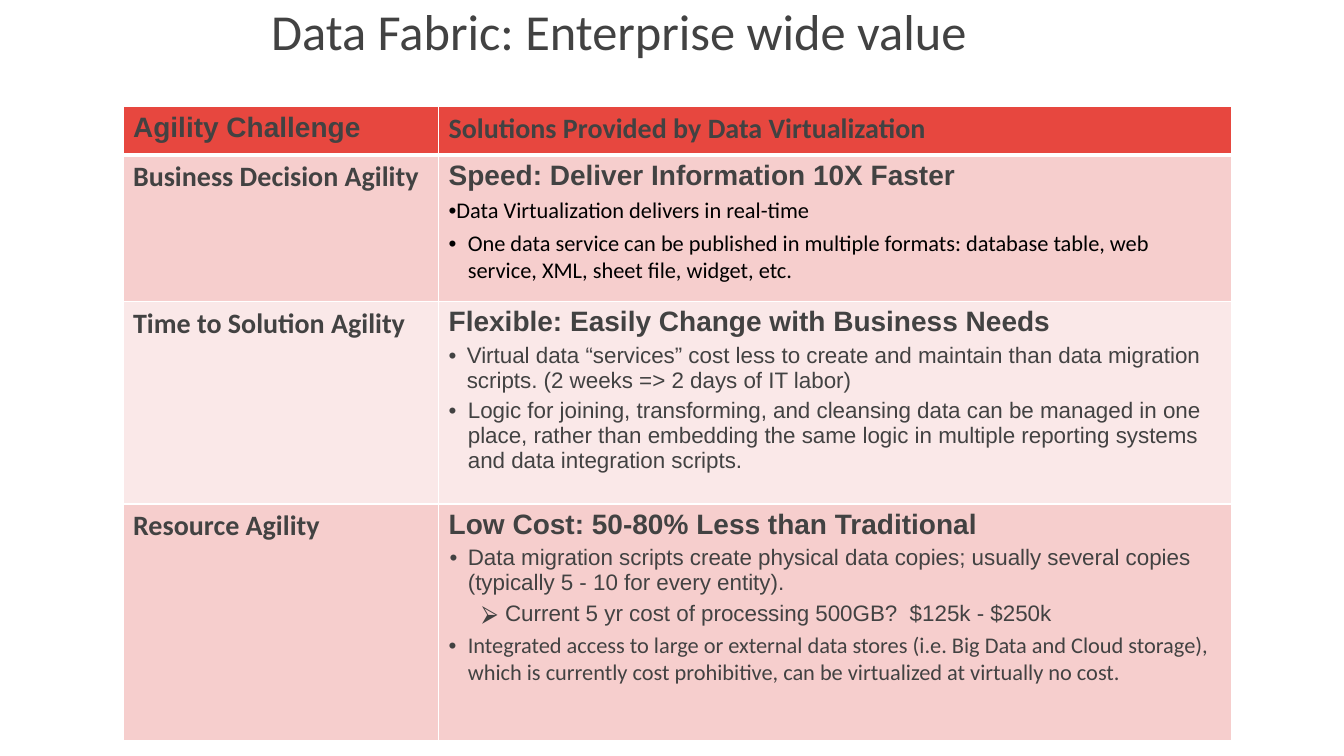
from lxml import etree
from pptx import Presentation
from pptx import util as u
from pptx.dml.color import RGBColor
from pptx.enum import text
from pptx.oxml.ns import qn

WIDTH, HEIGHT = 13.33, 7.5
GREY, BLACK, WHITE = "424242", "000000", "FFFFFF"
RED, ROSE, BLUSH = "E7473F", "F6CECD", "FAE8E8"

TITLE = "Data Fabric: Enterprise wide value"
COLUMNS = [3.13, 7.87]
ROWS = [0.48, 1.45, 2.01, 2.35]
FILLS = [RED, ROSE, BLUSH, ROSE]

HEADERS = [("Agility Challenge", "Arial"), ("Solutions Provided by Data Virtualization", "Calibri")]
CHALLENGES = [
    ("Business Decision Agility", "Speed: Deliver Information 10X Faster", [
        ("Data Virtualization delivers in real-time", "Calibri", BLACK, "•", 0, 0),
        ("One data service can be published in multiple formats: database table, web "
         "service, XML, sheet file, widget, etc.", "Calibri", BLACK, "•", 0.19, 0.19),
    ]),
    ("Time to Solution Agility", "Flexible: Easily Change with Business Needs", [
        ("Virtual data “services” cost less to create and maintain than data migration scripts. "
         "(2 weeks => 2 days of IT labor)", "Arial", GREY, "•", 0.18, 0.18),
        ("Logic for joining, transforming, and cleansing data can be managed in one place, rather "
         "than embedding the same logic in multiple reporting systems and data integration scripts.",
         "Arial", GREY, "•", 0.19, 0.19),
    ]),
    ("Resource Agility", "Low Cost: 50-80% Less than Traditional", [
        ("Data migration scripts create physical data copies; usually several copies "
         "(typically 5 - 10 for every entity).", "Arial", GREY, "•", 0.19, 0.18),
        ("Current 5 yr cost of processing 500GB?  $125k - $250k", "Arial", GREY, "⮚", 0.56, 0.23),
        ("Integrated access to large or external data stores (i.e. Big Data and Cloud storage), "
         "which is currently cost prohibitive, can be virtualized at virtually no cost.",
         "Calibri", GREY, "•", 0.19, 0.19),
    ]),
]


def color(value):
    return RGBColor.from_string(value)


def style(para, face, size, ink=GREY, bold=False):
    para.font.name = face
    para.font.size = u.Pt(size)
    para.font.bold = bold
    para.font.color.rgb = color(ink)


def add_bullet(para, mark, ink, margin, hang):
    props = para._p.get_or_add_pPr()
    props.set("marL", str(u.Inches(margin)))
    props.set("indent", str(-u.Inches(hang)))
    tint = etree.SubElement(props, qn("a:buClr"))
    etree.SubElement(tint, qn("a:srgbClr"), val=ink)
    etree.SubElement(props, qn("a:buFont"), typeface="Arial")
    etree.SubElement(props, qn("a:buChar"), char=mark)


def format_cell(cell, fill, bottom):
    props = cell._tc.get_or_add_tcPr()
    for side, points in (("L", 1), ("R", 1), ("T", 1), ("B", bottom)):
        line = etree.SubElement(props, qn("a:ln" + side), w=str(u.Pt(points)))
        solid = etree.SubElement(line, qn("a:solidFill"))
        etree.SubElement(solid, qn("a:srgbClr"), val=WHITE)
    cell.fill.solid()
    cell.fill.fore_color.rgb = color(fill)


def write_heading(cell, words, face):
    para = cell.text_frame.paragraphs[0]
    para.text = words
    style(para, face, 20, bold=True)


def write_title(page):
    title = page.shapes.title
    title.left, title.top = u.Inches(2.59), 0
    title.width, title.height = u.Inches(10.09), u.Inches(0.67)
    frame = title.text_frame
    frame.word_wrap = True
    frame.vertical_anchor = text.MSO_ANCHOR.MIDDLE
    para = frame.paragraphs[0]
    para.text = TITLE
    para.alignment = text.PP_ALIGN.LEFT
    para.line_spacing = 0.9
    style(para, "Calibri", 36)


def write_table(page):
    table = page.shapes.add_table(
        len(ROWS), len(COLUMNS), u.Inches(1.22), u.Inches(1.06),
        u.Inches(sum(COLUMNS)), u.Inches(sum(ROWS))).table
    for column, width in zip(table.columns, COLUMNS):
        column.width = u.Inches(width)
    for index, (row, height) in enumerate(zip(table.rows, ROWS)):
        row.height = u.Inches(height)
        for cell in row.cells:
            format_cell(cell, FILLS[index], 1 if index else 3)
    for index, (words, face) in enumerate(HEADERS):
        write_heading(table.cell(0, index), words, face)
    for index, (challenge, solution, points) in enumerate(CHALLENGES, 1):
        write_heading(table.cell(index, 0), challenge, "Calibri")
        answer = table.cell(index, 1)
        write_heading(answer, solution, "Arial")
        for words, face, ink, mark, margin, hang in points:
            para = answer.text_frame.add_paragraph()
            para.text = words
            add_bullet(para, mark, ink, margin, hang)
            para.space_before = u.Pt(4)
            style(para, face, 16, ink)


def main():
    deck = Presentation()
    deck.slide_width, deck.slide_height = u.Inches(WIDTH), u.Inches(HEIGHT)
    page = deck.slides.add_slide(deck.slide_layouts.get_by_name("Title Only"))
    write_title(page)
    write_table(page)
    deck.save("out.pptx")


if __name__ == "__main__":
    main()
